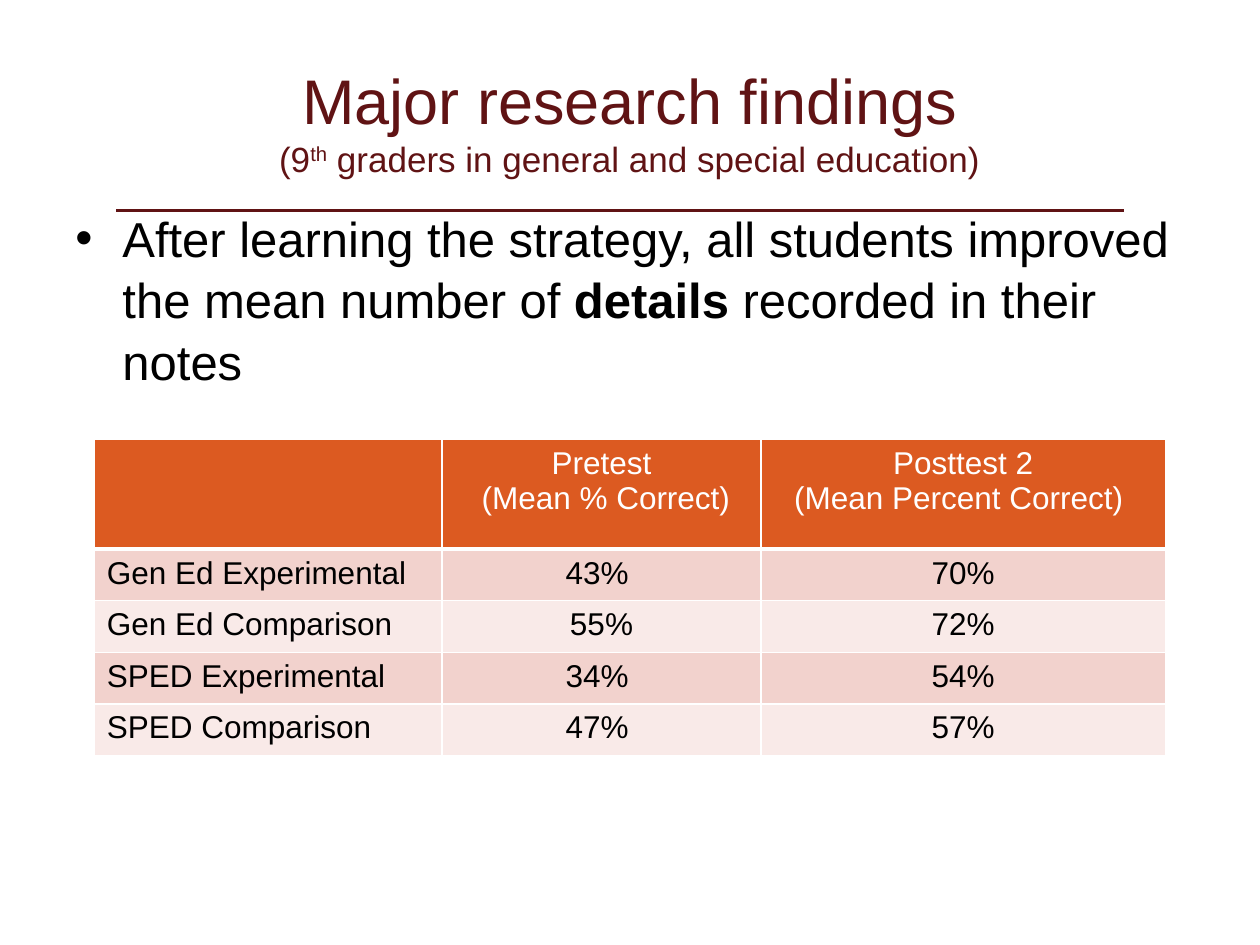
from lxml import etree
from pptx import Presentation
from pptx.dml.color import RGBColor
from pptx.enum import shapes, text
from pptx.oxml import ns
from pptx.util import Cm, Pt

FONT = "Arial"
COLORS = {
    "maroon": "601314",
    "black": "000000",
    "white": "FFFFFF",
    "header": "DC5A21",
    "band_dark": "F2D2CD",
    "band_light": "F9EAE8",
}
HEADER = ["", "Pretest\n (Mean % Correct)", "Posttest 2\n(Mean Percent Correct) "]
RESULTS = [
    ["Gen Ed Experimental", "43% ", "70%"],
    ["Gen Ed Comparison", "55%", "72%"],
    ["SPED Experimental", "34% ", "54%"],
    ["SPED Comparison", "47% ", "57%"],
]
COLUMN_WIDTHS = [7.01, 6.43, 8.15]
HEADER_HEIGHT, ROW_HEIGHT = 2.21, 1.04


def rgb(color):
    return RGBColor.from_string(COLORS[color])


def style(paragraph, size, color, align=text.PP_ALIGN.LEFT):
    paragraph.alignment = align
    font = paragraph.font
    font.name, font.size = FONT, Pt(size)
    font.color.rgb = rgb(color)


def add_run(paragraph, words):
    run = paragraph.add_run()
    run.text = words
    return run


def add_text_frame(slide, left, top, width, height):
    frame = slide.shapes.add_textbox(Cm(left), Cm(top), Cm(width), Cm(height)).text_frame
    frame.word_wrap = True
    return frame


def add_title(slide):
    frame = add_text_frame(slide, 1.9, 0.84, 21.59, 3.18)
    frame.vertical_anchor = text.MSO_ANCHOR.MIDDLE
    title = frame.paragraphs[0]
    style(title, 20, "maroon", text.PP_ALIGN.CENTER)
    add_run(title, "Major research findings").font.size = Pt(36)
    title.add_line_break()
    add_run(title, "(9")
    ordinal = add_run(title, "th")
    ordinal._r.get_or_add_rPr().set("baseline", "30000")
    add_run(title, " graders in general and special education)")


def add_rule(slide):
    rule = slide.shapes.add_connector(
        shapes.MSO_CONNECTOR.STRAIGHT, Cm(2.34), Cm(4.24), Cm(22.66), Cm(4.24))
    rule.line.color.rgb = rgb("maroon")
    rule.line.width = Pt(1.5)
    etree.SubElement(rule._element.spPr, ns.qn("a:effectLst"))


def add_finding(slide):
    finding = add_text_frame(slide, 1.27, 4.01, 22.86, 13.77).paragraphs[0]
    finding.line_spacing = 1.05
    properties = finding._p.get_or_add_pPr()
    properties.set("marL", str(Cm(0.95)))
    properties.set("indent", str(-Cm(0.95)))
    etree.SubElement(properties, ns.qn("a:buFont"), typeface=FONT)
    etree.SubElement(properties, ns.qn("a:buChar"), char="•")
    style(finding, 28, "black")
    add_run(finding, "After learning the strategy, all students improved the mean number of ")
    add_run(finding, "details ").font.bold = True
    add_run(finding, "recorded in their notes")


def set_borders(cell, bottom_width):
    """Draw white borders; they must precede the fill in the cell's XML."""
    properties = cell._tc.get_or_add_tcPr()
    for side, width in (("L", 1), ("R", 1), ("T", 1), ("B", bottom_width)):
        border = etree.SubElement(properties, ns.qn(f"a:ln{side}"), w=str(Pt(width)))
        fill = etree.SubElement(border, ns.qn("a:solidFill"))
        etree.SubElement(fill, ns.qn("a:srgbClr"), val=COLORS["white"])


def fill_cell(cell, words, background, color, align, bottom_width=1):
    set_borders(cell, bottom_width)
    cell.fill.solid()
    cell.fill.fore_color.rgb = rgb(background)
    cell.text = words
    for paragraph in cell.text_frame.paragraphs:
        style(paragraph, 18, color, align)


def add_results(slide):
    heights = [HEADER_HEIGHT] + [ROW_HEIGHT] * len(RESULTS)
    results = slide.shapes.add_table(
        len(heights), len(HEADER), Cm(1.9), Cm(8.86),
        Cm(sum(COLUMN_WIDTHS)), Cm(sum(heights))).table
    for column, width in zip(results.columns, COLUMN_WIDTHS):
        column.width = Cm(width)
    for row, height in zip(results.rows, heights):
        row.height = Cm(height)
    for c, words in enumerate(HEADER):
        fill_cell(results.cell(0, c), words, "header", "white",
                  text.PP_ALIGN.CENTER, bottom_width=3)
    for r, group in enumerate(RESULTS, start=1):
        band = "band_dark" if r % 2 else "band_light"
        for c, words in enumerate(group):
            align = text.PP_ALIGN.CENTER if c else text.PP_ALIGN.LEFT
            fill_cell(results.cell(r, c), words, band, "black", align)


def main():
    deck = Presentation()
    deck.slide_width, deck.slide_height = Cm(25.4), Cm(19.05)
    slide = deck.slides.add_slide(deck.slide_layouts[6])
    add_rule(slide)
    add_title(slide)
    add_finding(slide)
    add_results(slide)
    deck.save("out.pptx")


if __name__ == "__main__":
    main()
